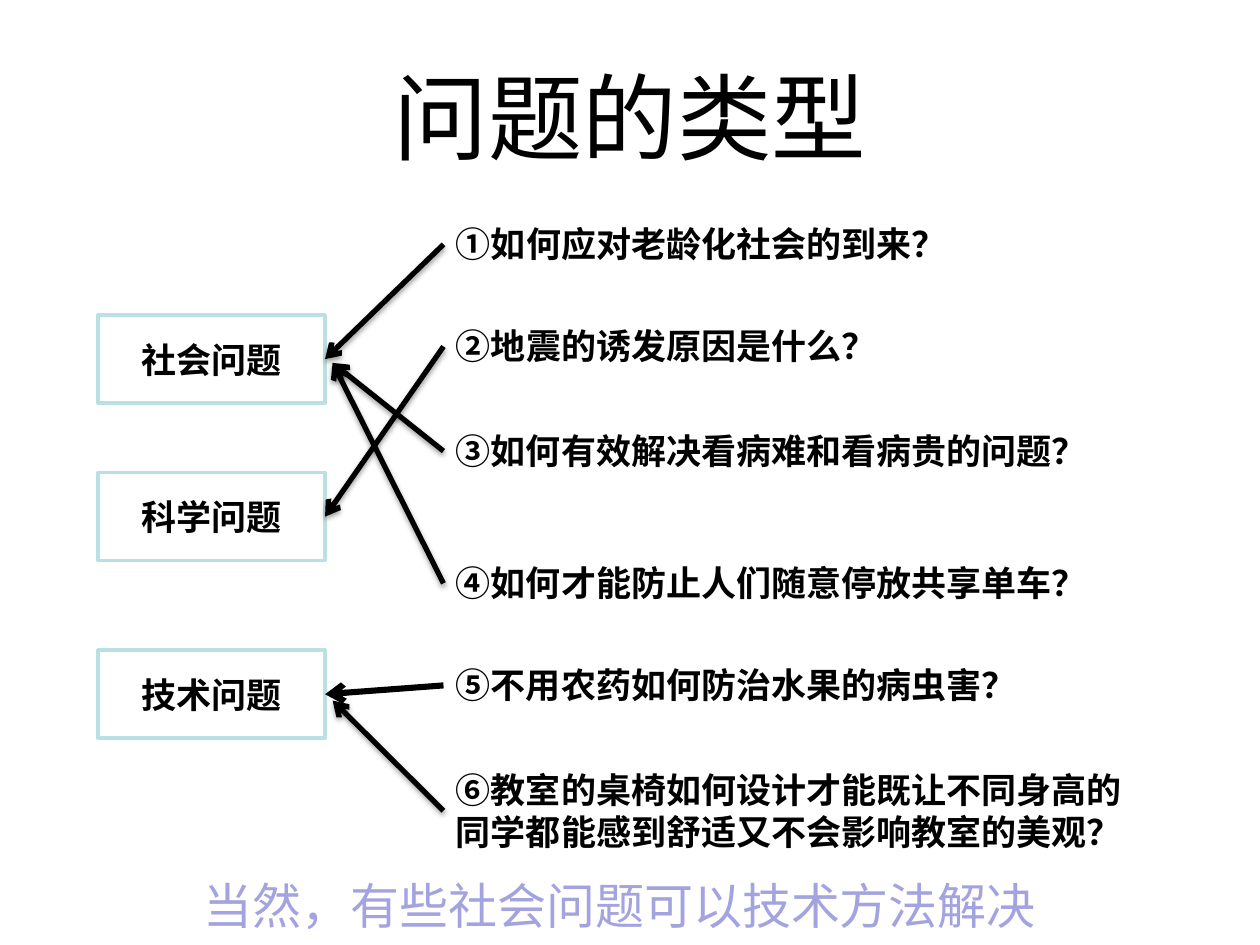
from dataclasses import dataclass
from typing import Optional

from lxml.etree import SubElement
from pptx import Presentation
from pptx.dml.color import RGBColor
from pptx.enum.shapes import MSO_CONNECTOR, MSO_SHAPE
from pptx.enum.text import MSO_ANCHOR, MSO_AUTO_SIZE, PP_ALIGN
from pptx.oxml.ns import qn
from pptx.util import Inches, Pt

BOLD = {"name": "Arial", "size": Pt(20), "bold": True}
HEAD = {"name": "Arial", "size": Pt(54), "bold": False}
NOTE = {"name": "Arial", "size": Pt(28), "bold": False}


@dataclass
class Kind:
    text: str
    top: float


@dataclass
class Query:
    text: str
    top: float
    width: float
    height: float
    kind: int
    tip: Optional[float] = None
    weight: float = 3
    shade: bool = True


KINDS = [Kind("社会问题", 2.5), Kind("科学问题", 3.75), Kind("技术问题", 5.16)]
QUERIES = [
    Query("①如何应对老龄化社会的到来？", 1.72, 4.11, 0.44, 0),
    Query("②地震的诱发原因是什么？", 2.53, 3.55, 0.44, 1),
    Query("③如何有效解决看病难和看病贵的问题？", 3.36, 5.23, 0.44, 0, 2.88),
    Query("④如何才能防止人们随意停放共享单车？", 4.41, 5.23, 0.44, 0, 2.88),
    Query("⑤不用农药如何防治水果的病虫害？", 5.22, 4.67, 0.44, 2,
          weight=3.5, shade=False),
    Query("⑥教室的桌椅如何设计才能既让不同身高的\n同学都能感到舒适又不会影响教室的美观？",
          6.05, 5.5, 0.77, 2, 5.56),
]


def paint(color, tint: str) -> None:
    color.rgb = RGBColor.from_string(tint)


def write(frame, text: str, form: dict, tint: str = "000000",
          align=PP_ALIGN.LEFT) -> None:
    frame.text = text
    for para in frame.paragraphs:
        para.alignment = align
        for run in para.runs:
            for key, value in form.items():
                setattr(run.font, key, value)
            paint(run.font.color, tint)


def add_kind(slide, kind: Kind):
    box = slide.shapes.add_shape(MSO_SHAPE.RECTANGLE, Inches(0.78),
                                 Inches(kind.top), Inches(1.8), Inches(0.7))
    box.shadow.inherit = False
    box.fill.solid()
    paint(box.fill.fore_color, "FFFFFF")
    paint(box.line.color, "BBE0E3")
    box.line.width = Pt(2)
    box.text_frame.vertical_anchor = MSO_ANCHOR.MIDDLE
    write(box.text_frame, kind.text, BOLD, align=PP_ALIGN.CENTER)
    return box


def add_label(slide, text: str, area: tuple, form: dict, tint: str = "000000"):
    label = slide.shapes.add_textbox(*map(Inches, area))
    label.text_frame.word_wrap = False
    label.text_frame.auto_size = MSO_AUTO_SIZE.SHAPE_TO_FIT_TEXT
    write(label.text_frame, text, form, tint)
    return label


def add_arrow(slide, query: Query, label, box) -> None:
    tip = query.tip or 0
    line = slide.shapes.add_connector(
        MSO_CONNECTOR.STRAIGHT, Inches(3.52),
        Inches(query.top + query.height / 2), Inches(2.64), Inches(tip))
    line.begin_connect(label, 1)
    if query.tip is None:
        line.end_connect(box, 3)
    paint(line.line.color, "000000")
    line.line.width = Pt(query.weight)
    SubElement(line.line._get_or_add_ln(), qn("a:tailEnd"), type="arrow")
    if not query.shade:
        SubElement(line._element.spPr, qn("a:effectLst"))


def main() -> None:
    deck = Presentation()
    deck.slide_width, deck.slide_height = Inches(10), Inches(7.5)
    slide = deck.slides.add_slide(deck.slide_layouts[5])

    title = slide.shapes.title
    place = {"left": 0.5, "top": 0.29, "width": 9, "height": 1.25}
    for key, value in place.items():
        setattr(title, key, Inches(value))
    title.text_frame.vertical_anchor = MSO_ANCHOR.MIDDLE
    write(title.text_frame, "问题的类型", HEAD, align=PP_ALIGN.CENTER)

    boxes = [add_kind(slide, kind) for kind in KINDS]
    for query in QUERIES:
        area = (3.52, query.top, query.width, query.height)
        label = add_label(slide, query.text, area, BOLD)
        add_arrow(slide, query, label, boxes[query.kind])

    add_label(slide, "当然，有些社会问题可以技术方法解决",
              (1.52, 6.9, 6.81, 0.57), NOTE, "A3A3E0")
    deck.save("out.pptx")


if __name__ == "__main__":
    main()
